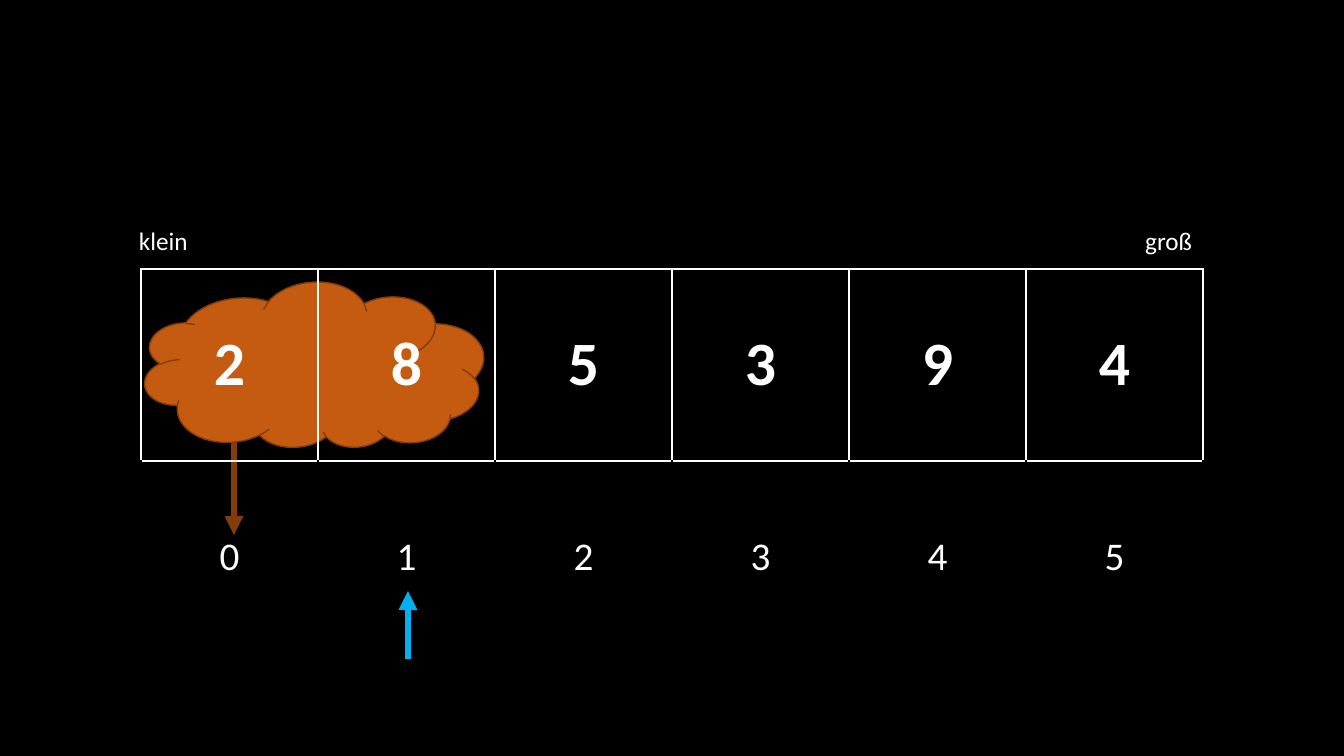
from lxml import etree
from pptx import Presentation, util as u
from pptx.dml.color import RGBColor
from pptx.enum import shapes, text
from pptx.oxml.ns import qn

COLORS = {"black": "000000", "white": "FFFFFF", "orange": "C55A11",
          "brown": "843C0B", "blue": "00B0F0"}
FONT = "Calibri"
VALUES = [2, 8, 5, 3, 9, 4]
CELL_W, CELL_H = 177, 192


def px(n):
    """Turn pixels into EMU."""
    return u.Emu(round(n * 914400 / 100.8))


def rgb(name):
    """Look up a named colour."""
    return RGBColor.from_string(COLORS[name])


def add_run(p, words, size, bold=False):
    """Add one white run to a paragraph."""
    r = p.add_run()
    r.text = words
    r.font.name, r.font.size, r.font.bold = FONT, u.Pt(size), bold
    r.font.color.rgb = rgb("white")


def add_arrow(s, x, y1, y2, color):
    """Draw a vertical arrow from y1 to y2."""
    c = s.shapes.add_connector(shapes.MSO_CONNECTOR.STRAIGHT,
                               px(x), px(y1), px(x), px(y2))
    c.line.color.rgb, c.line.width = rgb(color), u.Pt(4.5)
    etree.SubElement(c.line._get_or_add_ln(), qn("a:tailEnd"), type="triangle")
    etree.SubElement(c._element.spPr, qn("a:effectLst"))


def add_cloud(s, x, y, w, h):
    """Draw the upside-down cloud marking the sorted part."""
    sp = s.shapes.add_shape(shapes.MSO_SHAPE.CLOUD, px(x), px(y), px(w), px(h))
    sp.shadow.inherit = False
    sp.rotation = 355.5
    sp._element.spPr.find(qn("a:xfrm")).set("flipV", "1")
    sp.fill.solid()
    sp.fill.fore_color.rgb = rgb("orange")
    sp.line.color.rgb, sp.line.width = rgb("brown"), u.Pt(1)


def set_borders(cell, sides):
    """Give a cell 1 pt borders, listed in L, R, T, B order."""
    tc_pr = cell._tc.get_or_add_tcPr()
    for i, (side, color) in enumerate(sides.items()):
        ln = etree.Element(qn(f"a:ln{side}"), w=str(u.Pt(1)))
        fill = etree.SubElement(ln, qn("a:solidFill"))
        etree.SubElement(fill, qn("a:srgbClr"), val=COLORS[color])
        tc_pr.insert(i, ln)


def add_array(s, x, y):
    """Draw the array values with their indices below."""
    tbl = s.shapes.add_table(2, len(VALUES), px(x), px(y),
                             px(CELL_W * len(VALUES)), px(CELL_H * 2)).table
    tbl.first_row = tbl.horz_banding = False
    for row in tbl.rows:
        row.height = px(CELL_H)
    rows = [(VALUES, 44, True, "white"), (range(len(VALUES)), 28, False, "black")]
    for i, (items, size, bold, edge) in enumerate(rows):
        for j, item in enumerate(items):
            cell = tbl.cell(i, j)
            cell.fill.background()
            cell.vertical_anchor = text.MSO_ANCHOR.MIDDLE
            p = cell.text_frame.paragraphs[0]
            p.alignment = text.PP_ALIGN.CENTER
            add_run(p, str(item), size, bold)
            set_borders(cell, {"L": edge, "R": edge, "T": "white", "B": edge})


def add_label(s, x, words, align):
    """Add a label above the array."""
    tf = s.shapes.add_textbox(px(x), px(220), px(152), px(40)).text_frame
    tf.word_wrap = True
    tf.auto_size = text.MSO_AUTO_SIZE.SHAPE_TO_FIT_TEXT
    p = tf.paragraphs[0]
    p.alignment = align
    add_run(p, words, 18)


def main():
    """Build the sorting slide."""
    prs = Presentation()
    prs.slide_width, prs.slide_height = px(1344), px(756)
    s = prs.slides.add_slide(prs.slide_layouts[6])
    s.background.fill.solid()
    s.background.fill.fore_color.rgb = rgb("black")
    add_arrow(s, 234, 440, 535, "brown")
    add_cloud(s, 144, 283, 340, 168)
    add_array(s, 141, 269)
    add_label(s, 1050, "groß", text.PP_ALIGN.RIGHT)
    add_label(s, 129, "klein", text.PP_ALIGN.LEFT)
    add_arrow(s, 408, 659, 591, "blue")
    prs.save("out.pptx")


if __name__ == "__main__":
    main()
